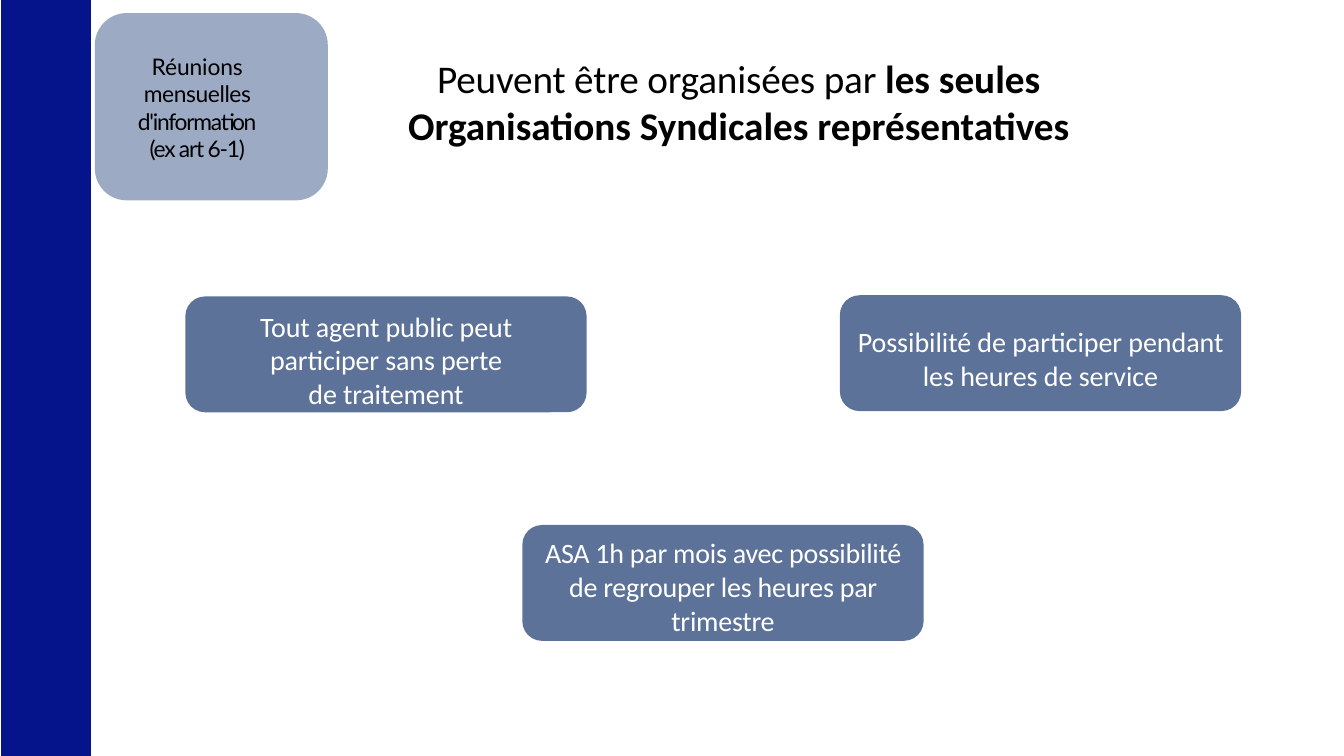
import pptx
import pptx.dml.color
import pptx.enum.shapes
import pptx.enum.text
import pptx.util
from pptx.util import Cm

NAVY = pptx.dml.color.RGBColor(0x06, 0x14, 0x8C)
SLATE = pptx.dml.color.RGBColor(0x5D, 0x72, 0x99)
MIST = pptx.dml.color.RGBColor(0x9C, 0xAA, 0xC4)
BLACK = pptx.dml.color.RGBColor(0, 0, 0)
WHITE = pptx.dml.color.RGBColor(0xFF, 0xFF, 0xFF)

# Each paragraph is a list of runs: (text, bold, letter spacing in points).
TITLE = [[("Peuvent être organisées par ", False, -0.1),
          ("les seules Organisations Syndicales représentatives", True, 0)]]
THEME = [[("Réunions ", False, -0.1), ("mensuelles ", False, -0.3),
          ("d'information", False, -0.9)],
         [("(ex art 6-1)", False, -0.9)]]

# Left and top of the card, side and top insets of its text (cm), text, spacing.
CARDS = [
    (4.67, 7.47, 1.5, 0.18,
     "Tout agent public peut participer sans perte\vde traitement", -0.1),
    (21.16, 7.44, 0.18, 0.59,
     "Possibilité de participer pendant les heures de service", -0.05),
    (13.16, 13.23, 0.28, 0.13,
     "ASA 1h par mois avec possibilité de regrouper les heures par trimestre", -0.2),
]
CARD_WIDTH, CARD_HEIGHT = 10.11, 2.92
CORNER = 0.17


def add_block(slide, preset, left, top, width, height, colour):
    block = slide.shapes.add_shape(preset, Cm(left), Cm(top), Cm(width), Cm(height))
    block.shadow.inherit = False
    block.fill.solid()
    block.fill.fore_color.rgb = colour
    block.line.fill.background()
    return block


def add_rounded(slide, left, top, width, height, colour):
    block = add_block(slide, pptx.enum.shapes.MSO_SHAPE.ROUNDED_RECTANGLE,
                      left, top, width, height, colour)
    block.adjustments[0] = CORNER
    return block


def write(frame, paragraphs, font, size, colour, insets):
    """Fill a frame with centred text; insets are left, top, right in cm."""
    frame.word_wrap = True
    frame.vertical_anchor = pptx.enum.text.MSO_ANCHOR.TOP
    frame.margin_left, frame.margin_top, frame.margin_right = map(Cm, insets)
    frame.margin_bottom = 0
    for index, runs in enumerate(paragraphs):
        paragraph = frame.add_paragraph() if index else frame.paragraphs[0]
        paragraph.text = "".join(runs[0][0]) if len(runs) == 1 else ""
        paragraph.alignment = pptx.enum.text.PP_ALIGN.CENTER
        if len(runs) > 1:
            for text, _, _ in runs:
                paragraph.add_run().text = text
        for number, run in enumerate(paragraph.runs):
            _, bold, spacing = runs[min(number, len(runs) - 1)]
            run.font.name = font
            run.font.size = pptx.util.Pt(size)
            run.font.bold = bold
            run.font.color.rgb = colour
            run.font._element.set("spc", str(round(spacing * 100)))


def main():
    deck = pptx.Presentation()
    deck.slide_width, deck.slide_height = Cm(33.86), Cm(19.05)
    slide = deck.slides.add_slide(deck.slide_layouts[6])

    add_block(slide, pptx.enum.shapes.MSO_SHAPE.RECTANGLE, 0.03, 0, 2.26, 19.05, NAVY)

    title = slide.shapes.add_textbox(Cm(8.59), Cm(1.3), Cm(20.04), Cm(2.44))
    write(title.text_frame, TITLE, "Calibri", 28, BLACK, (0, 0.06, 0))

    theme = add_rounded(slide, 2.39, 0.33, 5.87, 4.72, MIST)
    write(theme.text_frame, THEME, "Lato", 16.3, BLACK, (0.53, 0.76, 1.24))

    for left, top, side, inset, text, spacing in CARDS:
        card = add_rounded(slide, left, top, CARD_WIDTH, CARD_HEIGHT, SLATE)
        write(card.text_frame, [[(text, False, spacing)]], "Calibri", 20, WHITE,
              (side, inset, side))

    deck.save("out.pptx")


if __name__ == "__main__":
    main()
